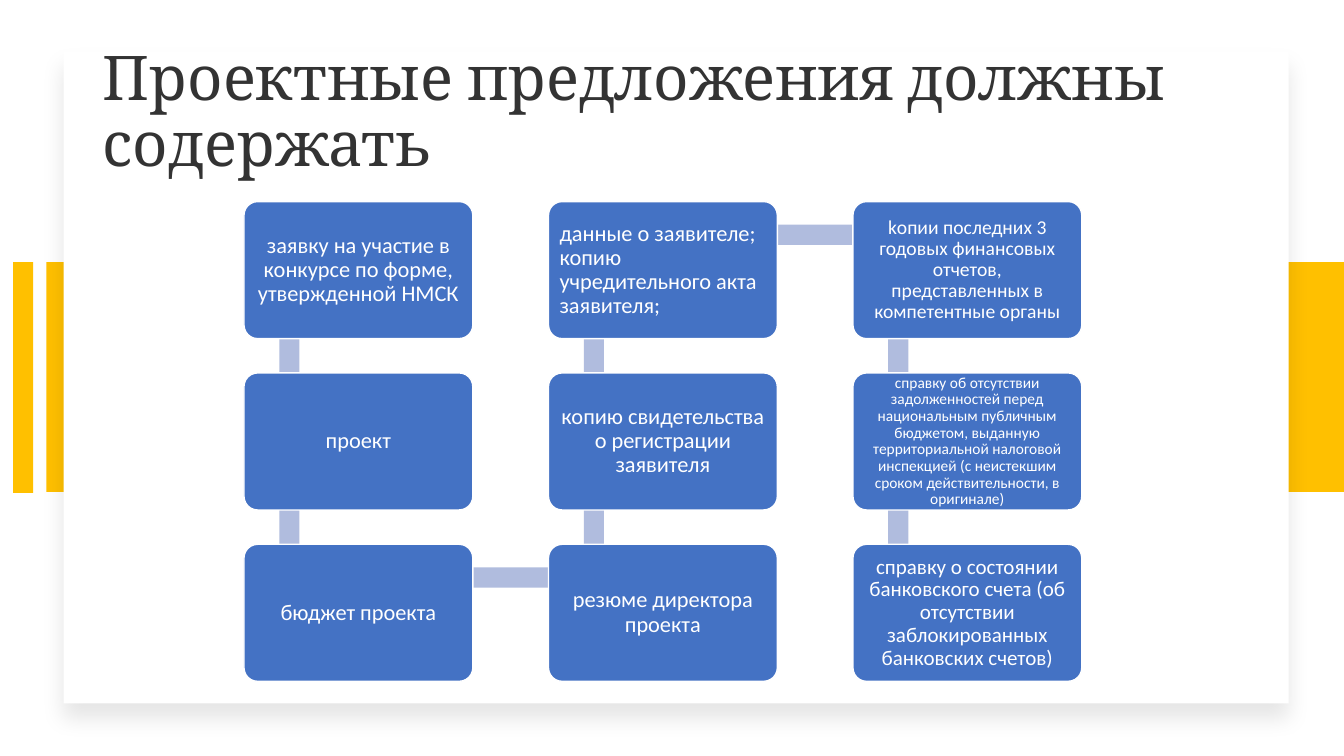
import pptx
import pptx.util
import pptx.dml.color
import pptx.enum.shapes
import pptx.enum.text
import pptx.oxml

PX = 9144
SHAPES = pptx.enum.shapes.MSO_SHAPE
ALIGN = pptx.enum.text.PP_ALIGN
THEME = {
    "paper": "FFFFFF", "accent": "FFC000", "step": "4472C4", "link": "B0BCDE",
    "title": "333333", "heading_font": "Cambria", "body_font": "Calibri",
    "title_size": 44, "outline": 1,
}
STEPS = [
    ("заявку на участие в конкурсе по форме, утвержденной НМСК", 16, ALIGN.CENTER),
    ("проект", 16, ALIGN.CENTER),
    ("бюджет проекта", 16, ALIGN.CENTER),
    ("резюме директора проекта", 16, ALIGN.CENTER),
    ("копию свидетельства о регистрации заявителя", 16, ALIGN.CENTER),
    ("данные о заявителе;\vкопию учредительного акта заявителя;", 16, ALIGN.LEFT),
    ("kопии последних 3 годовых финансовых отчетов, представленных в компетентные органы",
     14, ALIGN.CENTER),
    ("справку об отсутствии задолженностей перед национальным публичным бюджетом, "
     "выданную территориальной налоговой инспекцией (с неистекшим сроком действительности, "
     "в оригинале)", 11, ALIGN.CENTER),
    ("справку о состоянии банковского счета (об отсутствии заблокированных банковских счетов)",
     15, ALIGN.CENTER),
]
ROWS = 3
LEFT, TOP, COLUMN_PITCH, ROW_PITCH = 242, 200, 302, 170
BOX_WIDTH, BOX_HEIGHT, LINK_THICKNESS = 227, 136, 20

deck = pptx.Presentation()
deck.slide_width, deck.slide_height = 1333 * PX, 750 * PX
page = deck.slides.add_slide(deck.slide_layouts[6])


def add_block(kind, bounds, color):
    block = page.shapes.add_shape(kind, *(value * PX for value in bounds))
    block.shadow.inherit = False
    block.fill.solid()
    block.fill.fore_color.rgb = pptx.dml.color.RGBColor.from_string(THEME[color])
    block.line.fill.background()
    return block


def write(box, text, inset, font, size, color, align):
    frame = box.text_frame
    para = frame.paragraphs[0]
    para.text = text
    formats = {
        frame: {
            "word_wrap": True,
            "vertical_anchor": pptx.enum.text.MSO_ANCHOR.MIDDLE,
            "margin_left": inset[0] * PX, "margin_right": inset[0] * PX,
            "margin_top": inset[1] * PX, "margin_bottom": inset[1] * PX,
        },
        para: {"alignment": align, "line_spacing": 0.9},
    }
    for span in para.runs:
        formats[span.font] = {"name": font, "size": pptx.util.Pt(size)}
        span.font.color.rgb = pptx.dml.color.RGBColor.from_string(THEME[color])
    for target, values in formats.items():
        for name, value in values.items():
            setattr(target, name, value)


add_block(SHAPES.RECTANGLE, (46, 260, 1287, 228), "accent")
add_block(SHAPES.RECTANGLE, (13, 260, 20, 229), "accent")

card = add_block(SHAPES.RECTANGLE, (63, 51, 1215, 647), "paper")
effects = card._element.spPr.find(pptx.oxml.ns.qn("a:effectLst"))
effects.append(pptx.oxml.parse_xml(
    f'<a:outerShdw {pptx.oxml.ns.nsdecls("a")} blurRad="190500" dist="139700" dir="5400000" '
    'algn="t" rotWithShape="0"><a:srgbClr val="000000"><a:alpha val="10000"/></a:srgbClr>'
    '</a:outerShdw>'))

title = page.shapes.add_textbox(*(value * PX for value in (92, 40, 1150, 145)))
write(title, "Проектные предложения должны содержать", (10, 5),
      THEME["heading_font"], THEME["title_size"], "title", ALIGN.LEFT)

corners = []
for index in range(len(STEPS)):
    column, row = divmod(index, ROWS)
    if column % 2:
        row = ROWS - 1 - row
    corners.append((LEFT + column * COLUMN_PITCH, TOP + row * ROW_PITCH))

for (x, y), (next_x, next_y) in zip(corners, corners[1:]):
    if x == next_x:
        bounds = (x + 35, min(y, next_y) + 34, LINK_THICKNESS, ROW_PITCH)
    else:
        bounds = (x + 46, y + 23, COLUMN_PITCH, LINK_THICKNESS)
    add_block(SHAPES.RECTANGLE, bounds, "link")

for (x, y), (text, size, align) in zip(corners, STEPS):
    box = add_block(SHAPES.ROUNDED_RECTANGLE, (x, y, BOX_WIDTH, BOX_HEIGHT), "step")
    box.adjustments[0] = 0.1
    box.line.color.rgb = pptx.dml.color.RGBColor.from_string(THEME["paper"])
    box.line.width = pptx.util.Pt(THEME["outline"])
    inset = round(size * 0.43)
    write(box, text, (inset, inset), THEME["body_font"], size, "paper", align)

deck.save("out.pptx")
